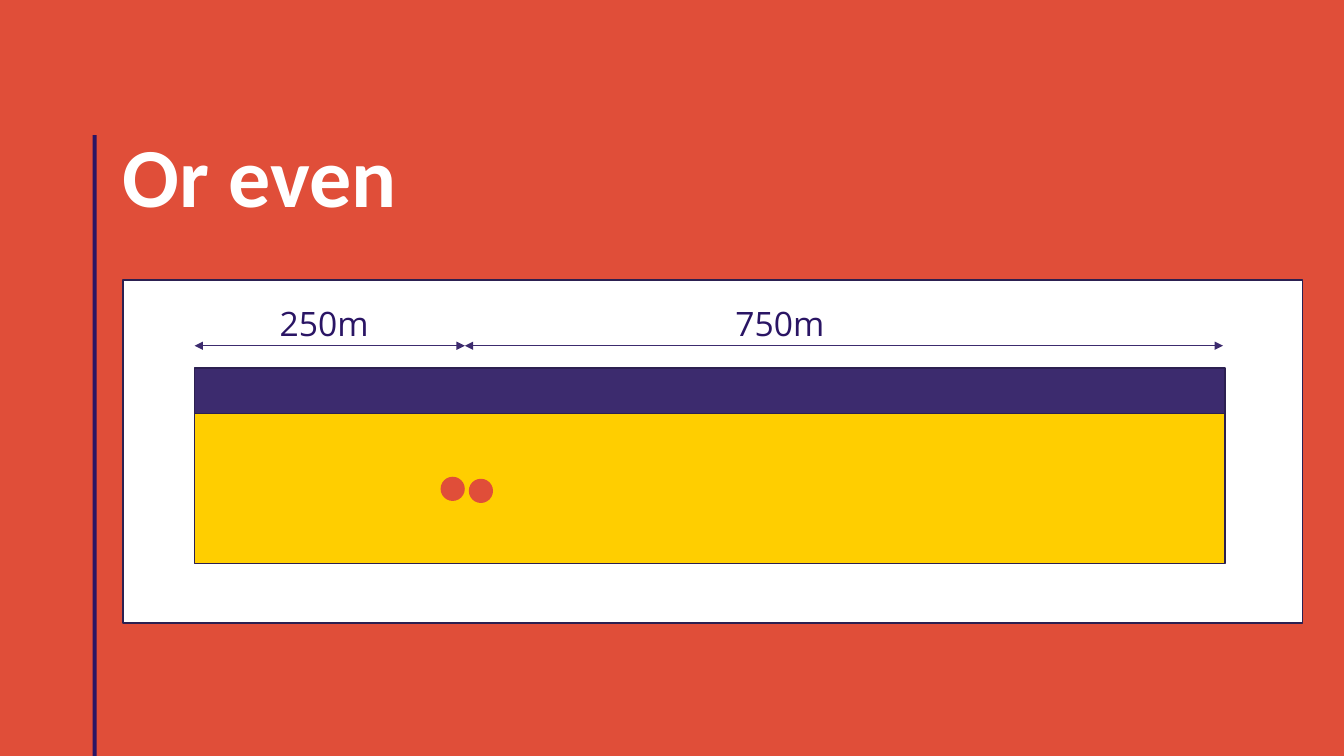
from dataclasses import dataclass

import pptx
import pptx.dml.color
import pptx.enum.shapes
import pptx.enum.text
import pptx.oxml.ns
import pptx.util
from lxml import etree
from pptx.util import Inches

SHAPE = pptx.enum.shapes.MSO_SHAPE
ALIGN = pptx.enum.text.PP_ALIGN
qn = pptx.oxml.ns.qn


@dataclass(frozen=True)
class Theme:
    red: str = "E04E39"
    white: str = "FFFFFF"
    navy: str = "2A1564"
    purple: str = "3C2B6E"
    outline: str = "2C2051"
    yellow: str = "FFCE00"
    title_font: str = "Calibri"
    label_font: str = "Open Sans"
    title_size: int = 60
    label_size: int = 24
    outline_width: float = 1
    arrow_width: float = 0.5


THEME = Theme()


def rgb(colour):
    return pptx.dml.color.RGBColor.from_string(colour)


def add_block(slide, kind, left, top, width, height, fill, outline=None):
    block = slide.shapes.add_shape(
        kind, Inches(left), Inches(top), Inches(width), Inches(height))
    block.shadow.inherit = False
    block.fill.solid()
    block.fill.fore_color.rgb = rgb(fill)
    if outline:
        block.line.color.rgb = rgb(outline)
        block.line.width = pptx.util.Pt(THEME.outline_width)
    else:
        block.line.fill.background()


def add_text(slide, text, left, top, width, height, font, size, colour,
             align=ALIGN.LEFT, bold=False):
    frame = slide.shapes.add_textbox(
        Inches(left), Inches(top), Inches(width), Inches(height)).text_frame
    frame.word_wrap = True
    frame.margin_left = frame.margin_right = 0
    frame.margin_top = frame.margin_bottom = 0
    paragraph = frame.paragraphs[0]
    paragraph.alignment = align
    paragraph.line_spacing = 0.9
    run = paragraph.add_run()
    run.text = text
    run.font.name = font
    run.font.size = pptx.util.Pt(size)
    run.font.bold = bold
    run.font.color.rgb = rgb(colour)


def add_dimension(slide, text, start, end, label_left):
    level = Inches(3.43)
    arrow = slide.shapes.add_connector(
        pptx.enum.shapes.MSO_CONNECTOR.STRAIGHT,
        Inches(start), level, Inches(end), level)
    arrow.line.color.rgb = rgb(THEME.purple)
    arrow.line.width = pptx.util.Pt(THEME.arrow_width)
    outline = arrow.line._get_or_add_ln()
    for tip in ("a:headEnd", "a:tailEnd"):
        etree.SubElement(outline, qn(tip)).set("type", "triangle")
    etree.SubElement(arrow._element.spPr, qn("a:effectLst"))
    add_text(slide, text, label_left, 3.05, 3.19, 0.58, THEME.label_font,
             THEME.label_size, THEME.navy, ALIGN.CENTER)


def main():
    deck = pptx.Presentation()
    deck.slide_width = Inches(13.33)
    deck.slide_height = Inches(7.5)
    slide = deck.slides.add_slide(deck.slide_layouts[6])
    slide.background.fill.solid()
    slide.background.fill.fore_color.rgb = rgb(THEME.red)

    add_block(slide, SHAPE.RECTANGLE, 0.92, 1.34, 0.04, 6.16, THEME.navy)
    add_text(slide, "Or even", 1.22, 1.34, 11.5, 1.28, THEME.title_font,
             THEME.title_size, THEME.white, bold=True)

    for left, top, width, height, fill in (
        (1.22, 2.78, 11.7, 3.4, THEME.white),
        (1.93, 3.65, 10.22, 1.84, THEME.purple),
        (1.93, 4.1, 10.22, 1.49, THEME.yellow),
    ):
        add_block(slide, SHAPE.RECTANGLE, left, top, width, height, fill,
                  THEME.outline)

    for left, top in ((4.65, 4.75), (4.37, 4.73)):
        add_block(slide, SHAPE.OVAL, left, top, 0.24, 0.24, THEME.red)

    split = 4.61
    add_dimension(slide, "250m", 1.93, split, 1.62)
    add_dimension(slide, "750m", split, 12.13, 6.14)

    deck.save("out.pptx")


if __name__ == "__main__":
    main()
